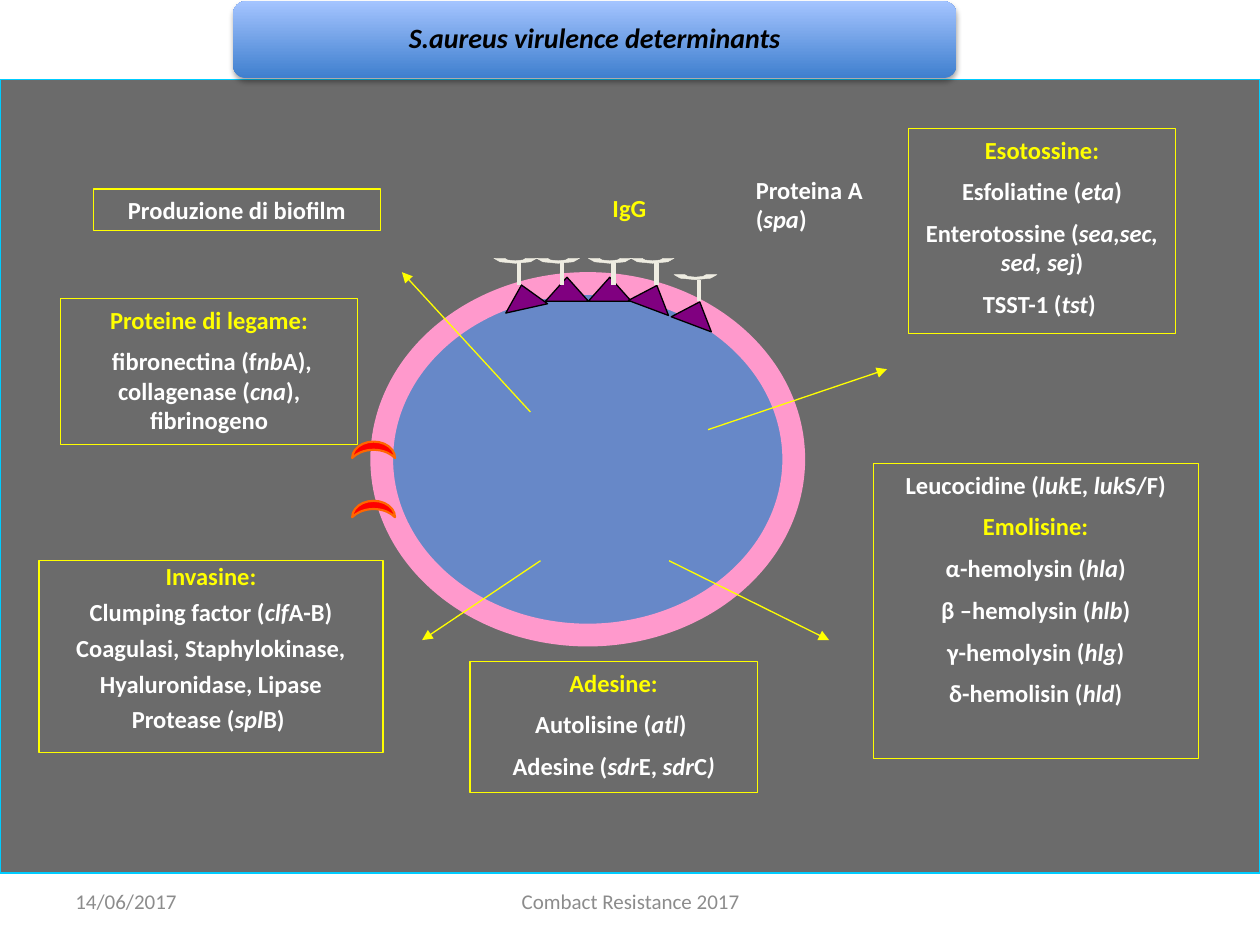
from math import cos, pi, sin

from pptx import Presentation
from pptx.dml.color import RGBColor
from pptx.enum.shapes import MSO_CONNECTOR as CONN, MSO_SHAPE as SHAPE
from pptx.enum.text import MSO_ANCHOR as ANCHOR, PP_ALIGN as ALIGN
from pptx.oxml.ns import qn
from pptx.util import Emu, Pt
from lxml.etree import SubElement

WHITE = RGBColor(0xFF, 0xFF, 0xFF)
BLACK = RGBColor(0x00, 0x00, 0x00)
YELLOW = RGBColor(0xFF, 0xFF, 0x00)
CYAN = RGBColor(0x00, 0xCC, 0xFF)
BLUE = RGBColor(0x66, 0x99, 0xFF)
PINK = RGBColor(0xFF, 0x99, 0xCC)
PURPLE = RGBColor(0x80, 0x00, 0x80)
RED = RGBColor(0xFF, 0x00, 0x00)
ORANGE = RGBColor(0xFF, 0x66, 0x00)
CREAM = RGBColor(0xEE, 0xEC, 0xE1)
GREY = RGBColor(0x8C, 0x8C, 0x8C)
BAR_DARK = RGBColor(0x3F, 0x7F, 0xCE)
BAR_LIGHT = RGBColor(0xA4, 0xC4, 0xFF)

PX_PER_INCH = 100


def px(n):
    return Emu(round(n * 914400 / PX_PER_INCH))


def write(tf, paragraphs, size=14, color=WHITE, bold=True, align=ALIGN.CENTER,
          before=7, spacing=None, anchor=ANCHOR.TOP):
    """Fill a text frame; # starts a yellow heading, *...* is italic."""
    tf.word_wrap = True
    tf.vertical_anchor = anchor
    for i, text in enumerate(paragraphs):
        p = tf.paragraphs[0] if i == 0 else tf.add_paragraph()
        p.alignment = align
        p.space_before = Pt(before)
        p.line_spacing = spacing
        shade = YELLOW if text.startswith("#") else color
        for j, part in enumerate(text.lstrip("#").split("*")):
            if not part:
                continue
            r = p.add_run()
            r.text = part
            r.font.name = "Calibri"
            r.font.size = Pt(size)
            r.font.bold = bold
            r.font.italic = j % 2 == 1
            r.font.color.rgb = shade


class Deck:
    """Current slide and the style of its elements."""

    def __init__(self, slide, thin=0.75):
        self.s = slide
        self.thin = thin

    def style(self, sp, fill, line, width, alpha=None):
        sp.shadow.inherit = False
        if fill is None:
            sp.fill.background()
        else:
            sp.fill.solid()
            sp.fill.fore_color.rgb = fill
            if alpha:
                clr = sp.fill._xPr.find(".//" + qn("a:srgbClr"))
                SubElement(clr, qn("a:alpha"), val=str(alpha * 1000))
        if line is None:
            sp.line.fill.background()
        else:
            sp.line.color.rgb = line
            sp.line.width = Pt(width or self.thin)

    def shape(self, kind, x, y, w, h, fill=None, line=None, width=None, alpha=None, rot=0):
        sp = self.s.shapes.add_shape(kind, px(x), px(y), px(w), px(h))
        sp.rotation = rot
        self.style(sp, fill, line, width, alpha)
        return sp

    def box(self, x, y, w, h, paragraphs, **fmt):
        sp = self.shape(SHAPE.RECTANGLE, x, y, w, h, line=YELLOW)
        write(sp.text_frame, paragraphs, **fmt)

    def label(self, x, y, w, h, text, **fmt):
        sp = self.s.shapes.add_textbox(px(x), px(y), px(w), px(h))
        write(sp.text_frame, [text], **fmt)

    def line(self, x1, y1, x2, y2, color=YELLOW, width=None, arrow=False):
        c = self.s.shapes.add_connector(CONN.STRAIGHT, px(x1), px(y1), px(x2), px(y2))
        c.line.color.rgb = color
        c.line.width = Pt(width or self.thin)
        if arrow:
            SubElement(c.line._get_or_add_ln(), qn("a:tailEnd"), type="triangle")
        SubElement(c._element.spPr, qn("a:effectLst"))

    def antibody(self, x, y, w=34, depth=4, steps=4):
        """A stem under a shallow bowl whose rim is at y."""
        self.line(x + 20, y + depth, x + 20, y + 21, color=CREAM, width=2.5)
        angles = [pi * i / steps for i in range(steps + 1)]
        outer = [(cos(a), sin(a)) for a in angles]
        inner = [(u / 2, v / 2) for u, v in reversed(outer)]
        pts = [(px(x + w / 2 * (1 + u)), px(y + depth * v)) for u, v in outer + inner]
        fb = self.s.shapes.build_freeform(*pts[0])
        fb.add_line_segments(pts[1:], close=True)
        self.style(fb.convert_to_shape(), CREAM, CREAM, 0.25)

    def title(self, x, y, w, h, text):
        bar = self.shape(SHAPE.ROUNDED_RECTANGLE, x, y, w, h)
        bar.fill.gradient()
        bar.fill.gradient_angle = 90
        for stop, color in zip(bar.fill.gradient_stops, (BAR_DARK, BAR_LIGHT)):
            stop.color.rgb = color
        effects = bar._element.spPr.find(qn("a:effectLst"))
        shadow = SubElement(effects, qn("a:outerShdw"), blurRad=str(Pt(3.1)),
                            dist=str(Pt(1.8)), dir="5400000", rotWithShape="0")
        clr = SubElement(shadow, qn("a:srgbClr"), val=str(BLACK))
        SubElement(clr, qn("a:alpha"), val="35000")
        # The placeholder goes in front of its bar
        t = self.s.shapes.title
        t.left, t.top, t.width, t.height = px(x), px(y), px(w), px(h)
        bar._element.addnext(t._element)
        write(t.text_frame, [text], size=16, color=BLACK, before=0, spacing=0.9,
              anchor=ANCHOR.MIDDLE)


def main():
    prs = Presentation()
    prs.slide_width, prs.slide_height = px(1000), px(750)
    d = Deck(prs.slides.add_slide(prs.slide_layouts[5]))

    # Background panel
    d.shape(SHAPE.RECTANGLE, 0, 63, 1000, 630, fill=BLACK, alpha=58, line=CYAN)

    # Virulence factor boxes
    d.box(693, 368, 258, 234, [
        "Leucocidine (*luk*E, *luk*S/F)", "#Emolisine:", "α-hemolysin (*hla*)",
        "β –hemolysin (*hlb*)", "γ-hemolysin (*hlg*)", "δ-hemolisin (*hld*)"])
    d.box(721, 102, 212, 163, [
        "#Esotossine:", "Esfoliatine (*eta*)",
        "Enterotossine (*sea,sec, sed, sej*)", "TSST-1 (*tst*) "])
    d.box(48, 237, 236, 116, [
        "#Proteine di legame:",
        " fibronectina (f*nb*A), collagenase (*cna*), fibrinogeno"])
    d.box(31, 445, 273, 152, [
        "#Invasine:", "Clumping factor (*clf*A-B)", "Coagulasi, Staphylokinase,",
        "Hyaluronidase, Lipase", "Protease (*spl*B) "], spacing=0.8)
    d.label(397, 148, 205, 34, "#IgG")
    d.label(590, 134, 114, 57, "Proteina A (*spa*)", align=ALIGN.LEFT)

    # Bacterial cell
    d.shape(SHAPE.OVAL, 303, 225, 327, 279, fill=BLUE, alpha=63, line=PINK, width=13)

    # Protein A on the wall, with bound antibodies
    for x, y, rot in [(433, 220, 0), (467, 220, 0), (501, 226, 20.6),
                      (399, 226, -12.6), (535, 239, 20.6)]:
        d.shape(SHAPE.ISOSCELES_TRIANGLE, x, y, 34, 19, fill=PURPLE, line=BLACK, rot=rot)
    for x, y in [(392, 205), (426, 205), (467, 205), (501, 205), (535, 218)]:
        d.antibody(x, y)

    # Binding proteins
    for y in (340, 387):
        d.shape(SHAPE.MOON, 290, y, 13, 34, fill=RED, line=ORANGE, width=1.25, rot=90)

    # Arrows from the cell to its factors
    for ends in [(531, 445, 658, 508), (562, 341, 704, 293),
                 (421, 327, 319, 216), (429, 445, 335, 508)]:
        d.line(*ends, arrow=True)

    # Boxes above and below the cell
    d.box(373, 525, 228, 104, [
        "#Adesine:", "Autolisine (*atl*) ", "Adesine (*sdr*E, *sdr*C*)*"])
    d.box(74, 150, 228, 33, ["Produzione di biofilm"])

    # Title and footer
    d.title(185, 1, 574, 61, "*S.aureus virulence determinants*")
    footer = dict(size=12, color=GREY, bold=False, before=0, anchor=ANCHOR.MIDDLE)
    d.label(50, 695, 233, 40, "14/06/2017", align=ALIGN.LEFT, **footer)
    d.label(342, 695, 317, 40, "Combact Resistance 2017", **footer)

    prs.save("out.pptx")


if __name__ == "__main__":
    main()
